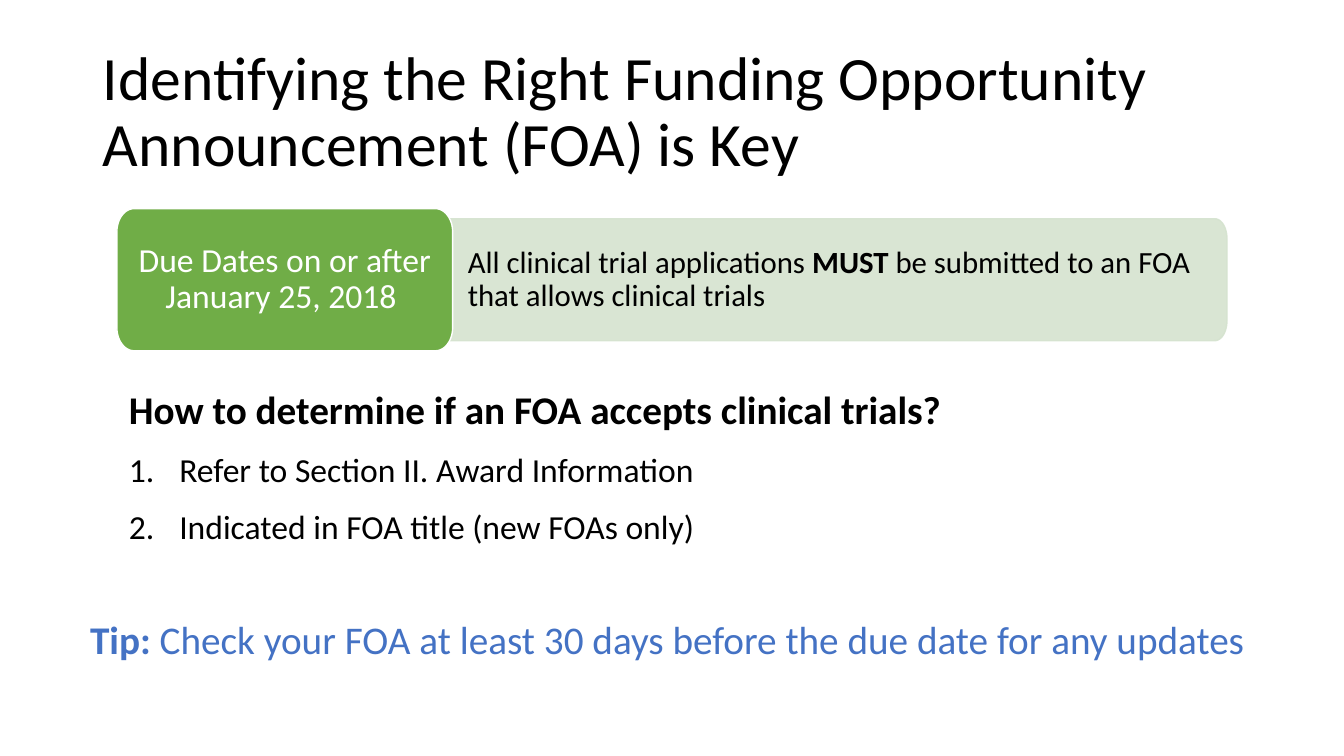
from math import cos, pi, sin

from lxml import etree
from pptx import Presentation
from pptx.dml.color import RGBColor
from pptx.enum.shapes import MSO_SHAPE
from pptx.enum.text import MSO_ANCHOR, MSO_AUTO_SIZE, PP_ALIGN
from pptx.oxml.ns import qn
from pptx.util import Inches, Pt

FONT = "Calibri"
COLORS = {
    "text": "000000",
    "white": "FFFFFF",
    "tip": "4472C4",
    "date": "70AD47",
    "rule": "D5E3CF",
}


def rgb(name):
    return RGBColor.from_string(COLORS[name])


def write_runs(paragraph, parts, size, color):
    """Fill a paragraph from (text, bold) pairs."""
    for text, bold in parts:
        run = paragraph.add_run()
        run.text = text
        run.font.name = FONT
        run.font.size = Pt(size)
        run.font.bold = bold
        run.font.color.rgb = rgb(color)


def set_insets(frame, left, top, right, bottom):
    frame.margin_left, frame.margin_top = Inches(left), Inches(top)
    frame.margin_right, frame.margin_bottom = Inches(right), Inches(bottom)


def set_opacity(color_format, percent):
    for color in color_format.iter(qn("a:srgbClr")):
        etree.SubElement(color, qn("a:alpha"), val=str(percent * 1000))


def corner(cx, cy, rx, ry, start):
    """Points of a clockwise quarter ellipse from the given angle."""
    steps = 12
    angles = [start + pi / 2 * i / steps for i in range(steps + 1)]
    return [(cx + rx * cos(a), cy + ry * sin(a)) for a in angles]


def add_panel(slide, box, radii, fill, line, round_left=True):
    """Panel with elliptical right corners and, optionally, left ones."""
    left, top, width, height = box
    rx, ry = radii
    right, bottom = left + width, top + height
    points = corner(right - rx, top + ry, rx, ry, -pi / 2)
    points += corner(right - rx, bottom - ry, rx, ry, 0)
    if round_left:
        points += corner(left + rx, bottom - ry, rx, ry, pi / 2)
        points += corner(left + rx, top + ry, rx, ry, pi)
    else:
        points += [(left, bottom), (left, top)]
    outline = [(Inches(x), Inches(y)) for x, y in points]
    builder = slide.shapes.build_freeform(*outline[0])
    builder.add_line_segments(outline[1:], close=True)
    panel = builder.convert_to_shape()
    panel.shadow.inherit = False
    panel.fill.solid()
    panel.fill.fore_color.rgb = rgb(fill)
    panel.line.color.rgb = rgb(line)
    panel.line.width = Pt(1)
    frame = panel.text_frame
    frame.word_wrap = True
    frame.vertical_anchor = MSO_ANCHOR.MIDDLE
    frame.paragraphs[0].line_spacing = 0.9
    return panel


def add_title(slide, left, top, width, height):
    title = slide.shapes.title
    title.left, title.top = Inches(left), Inches(top)
    title.width, title.height = Inches(width), Inches(height)
    frame = title.text_frame
    frame.word_wrap = True
    frame.auto_size = MSO_AUTO_SIZE.NONE
    frame.vertical_anchor = MSO_ANCHOR.MIDDLE
    heading = frame.paragraphs[0]
    heading.alignment = PP_ALIGN.LEFT
    heading.line_spacing = 0.9
    write_runs(heading, [("Identifying the Right Funding Opportunity "
                          "Announcement (FOA) is Key", False)], 44, "text")


def add_due_date_banner(slide, left, top, width, height):
    date_width, overlap, recess = 3.33, 0.12, 0.1
    rule_left = date_width - overlap
    rule = add_panel(
        slide,
        (left + rule_left, top + recess, width - rule_left, height - 2 * recess),
        (0.12, 0.2), "rule", "rule", round_left=False)
    set_opacity(rule.fill._xPr, 90)
    set_insets(rule.text_frame, 0.27, 0.18, 0.31, 0.18)
    requirement = rule.text_frame.paragraphs[0]
    requirement.alignment = PP_ALIGN.LEFT
    write_runs(requirement, [
        ("All clinical trial applications ", False),
        ("MUST", True),
        (" be submitted to an FOA that allows clinical trials", False),
    ], 22, "text")

    date = add_panel(slide, (left, top, date_width, height),
                     (0.17, 0.23), "date", "white")
    set_insets(date.text_frame, 0.14, 0.09, 0.14, 0.09)
    due_date = date.text_frame.paragraphs[0]
    due_date.alignment = PP_ALIGN.CENTER
    write_runs(due_date, [("Due Dates on or after January 25, 2018 ", False)],
               24, "white")


def add_steps(slide, left, top, width, height):
    frame = slide.shapes.add_textbox(Inches(left), Inches(top), Inches(width),
                                     Inches(height)).text_frame
    frame.word_wrap = True
    question = frame.paragraphs[0]
    question.space_before = Pt(9)
    write_runs(question, [("How to determine if an FOA accepts clinical trials?",
                           True)], 28, "text")
    for text in ("Refer to Section II. Award Information",
                 "Indicated in FOA title (new FOAs only)"):
        step = frame.add_paragraph()
        step.space_before = Pt(12)
        write_runs(step, [(text, False)], 24, "text")
        properties = step._p.get_or_add_pPr()
        properties.set("marL", str(Inches(0.5)))
        properties.set("indent", str(-Inches(0.5)))
        etree.SubElement(properties, qn("a:buFont"), typeface="+mj-lt")
        etree.SubElement(properties, qn("a:buAutoNum"), type="arabicPeriod")


def add_tip(slide, left, top, width, height):
    tip = slide.shapes.add_shape(MSO_SHAPE.ROUNDED_RECTANGLE, Inches(left),
                                 Inches(top), Inches(width), Inches(height))
    tip.shadow.inherit = False
    tip.fill.background()
    tip.line.fill.background()
    frame = tip.text_frame
    frame.word_wrap = True
    frame.vertical_anchor = MSO_ANCHOR.TOP
    advice = frame.paragraphs[0]
    advice.alignment = PP_ALIGN.CENTER
    write_runs(advice, [
        ("Tip: ", True),
        ("Check your FOA at least 30 days before the due date for any updates ",
         False),
    ], 28, "tip")


def main():
    deck = Presentation()
    deck.slide_width, deck.slide_height = Inches(13.33), Inches(7.5)
    slide = deck.slides.add_slide(deck.slide_layouts[5])
    add_title(slide, 0.92, 0.4, 11.5, 1.45)
    add_steps(slide, 1.18, 3.77, 9.68, 2.25)
    add_tip(slide, 0.34, 6.02, 12.64, 0.63)
    add_due_date_banner(slide, 1.16, 2.07, 11.01, 1.41)
    deck.save("out.pptx")


if __name__ == "__main__":
    main()
